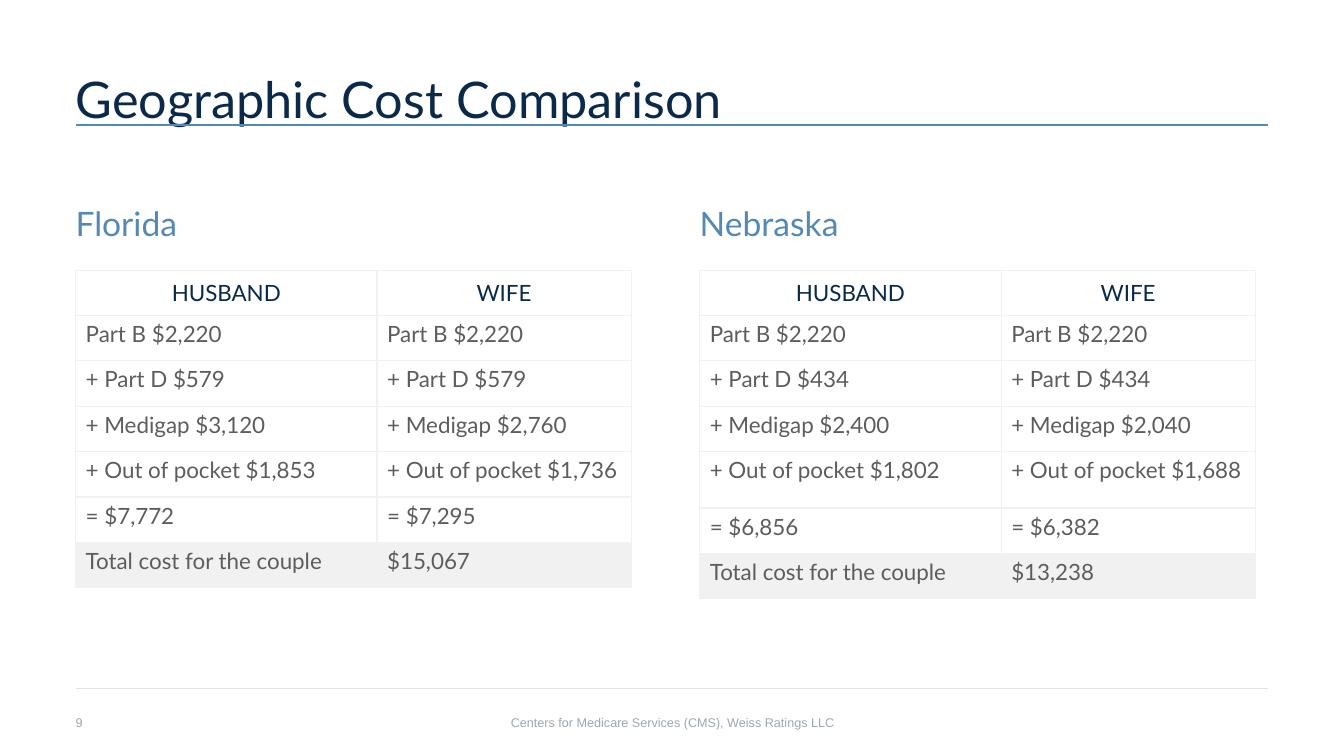
from lxml.etree import SubElement as Sub
from pptx import Presentation as Deck
from pptx.dml.color import RGBColor as Color
from pptx.enum.shapes import MSO_CONNECTOR as Link
from pptx.enum.text import MSO_ANCHOR as Anchor, PP_ALIGN as Align
from pptx.oxml import parse_xml
from pptx.oxml.ns import nsdecls, qn
from pptx.util import Pt

PX = 9144  # 100 px to the inch
NAVY, BLUE, GREY = "0B2949", "5489B6", "5C5E5B"
PALE, RULE, MUTED = "F1F1F1", "E1E5E8", "9EA7B0"
LEFT, RIGHT = 75, 1258
ROW, WIDTHS = 45, (299, 252)

# State, left edge, height of the out-of-pocket row, husband and wife costs, total
STATES = [
    ("Florida", 75, 45, ("$2,220", "$579", "$3,120", "$1,853", "$7,772"),
     ("$2,220", "$579", "$2,760", "$1,736", "$7,295"), "$15,067"),
    ("Nebraska", 694, 56, ("$2,220", "$434", "$2,400", "$1,802", "$6,856"),
     ("$2,220", "$434", "$2,040", "$1,688", "$6,382"), "$13,238"),
]
LABELS = ("Part B", "+ Part D", "+ Medigap", "+ Out of pocket", "=")


def px(*nums):
    return [num * PX for num in nums]


def tint(code):
    return Color.from_string(code)


def style(para, size, color, face="Lato", align=Align.LEFT):
    para.alignment = align
    for run in para.runs:
        run.font.size = Pt(size)
        run.font.name = face
        run.font.color.rgb = tint(color)


def add_text(slide, box, text, size, color, face="Lato",
             align=Align.LEFT, anchor=Anchor.TOP):
    frame = slide.shapes.add_textbox(*px(*box)).text_frame
    frame.word_wrap = True
    frame.vertical_anchor = anchor
    frame.margin_left = frame.margin_right = 0
    frame.margin_top = frame.margin_bottom = 0
    frame.text = text
    para = frame.paragraphs[0]
    style(para, size, color, face, align)
    return para


def add_rule(slide, top, color, width):
    line = slide.shapes.add_connector(Link.STRAIGHT, *px(LEFT, top, RIGHT, top))
    line.line.color.rgb = tint(color)
    line.line.width = Pt(width)
    Sub(line._element.spPr, qn("a:effectLst"))


def set_edges(cell):
    props = cell._tc.get_or_add_tcPr()
    for spot, side in enumerate("LRTB"):
        props.insert(spot, parse_xml(
            f'<a:ln{side} {nsdecls("a")} w="12700"><a:solidFill>'
            f'<a:srgbClr val="{PALE}"/></a:solidFill></a:ln{side}>'))


def add_costs(slide, left, tall, rows):
    heights = [ROW] * len(rows)
    heights[4] = tall
    box = px(left, 268, sum(WIDTHS), sum(heights))
    table = slide.shapes.add_table(len(rows), len(WIDTHS), *box).table
    table.first_row = table.horz_banding = False
    for col, width in zip(table.columns, WIDTHS):
        col.width = width * PX
    for row, height in zip(table.rows, heights):
        row.height = height * PX
    for r, texts in enumerate(rows):
        for c, text in enumerate(texts):
            cell = table.cell(r, c)
            cell.text = text
            para = cell.text_frame.paragraphs[0]
            if r == 0:
                cell.vertical_anchor = Anchor.MIDDLE
                style(para, 16, NAVY, align=Align.CENTER)
            else:
                style(para, 16, GREY)
            if r == len(rows) - 1:
                cell.fill.solid()
                cell.fill.fore_color.rgb = tint(PALE)
            else:
                cell.fill.background()
            set_edges(cell)


def main():
    deck = Deck()
    deck.slide_width, deck.slide_height = px(1333, 750)
    slide = deck.slides.add_slide(deck.slide_layouts[6])

    # Title
    title = add_text(slide, (LEFT, 74, 1183, 100),
                     "Geographic Cost Comparison", 36, NAVY)
    title.line_spacing = 0.9
    add_rule(slide, 124, BLUE, 1)

    # One heading and cost table per state
    for name, left, tall, man, wife, total in STATES:
        head = add_text(slide, (left, 201, 174, 40), name, 24, BLUE,
                        anchor=Anchor.MIDDLE)
        head.space_after = Pt(10)
        costs = [(f"{label} {his}", f"{label} {hers}")
                 for label, his, hers in zip(LABELS, man, wife)]
        add_costs(slide, left, tall, [("HUSBAND", "WIFE"), *costs,
                                      ("Total cost for the couple", total)])

    # Footer
    add_rule(slide, 683, RULE, 0.5)
    add_text(slide, (452, 693, 430, 31),
             "Centers for Medicare Services (CMS), Weiss Ratings LLC",
             9, MUTED, "Arial", Align.CENTER, Anchor.BOTTOM)
    add_text(slide, (LEFT, 709, 30, 15), "9", 9, MUTED, "Arial",
             anchor=Anchor.BOTTOM)

    deck.save("out.pptx")


if __name__ == "__main__":
    main()
